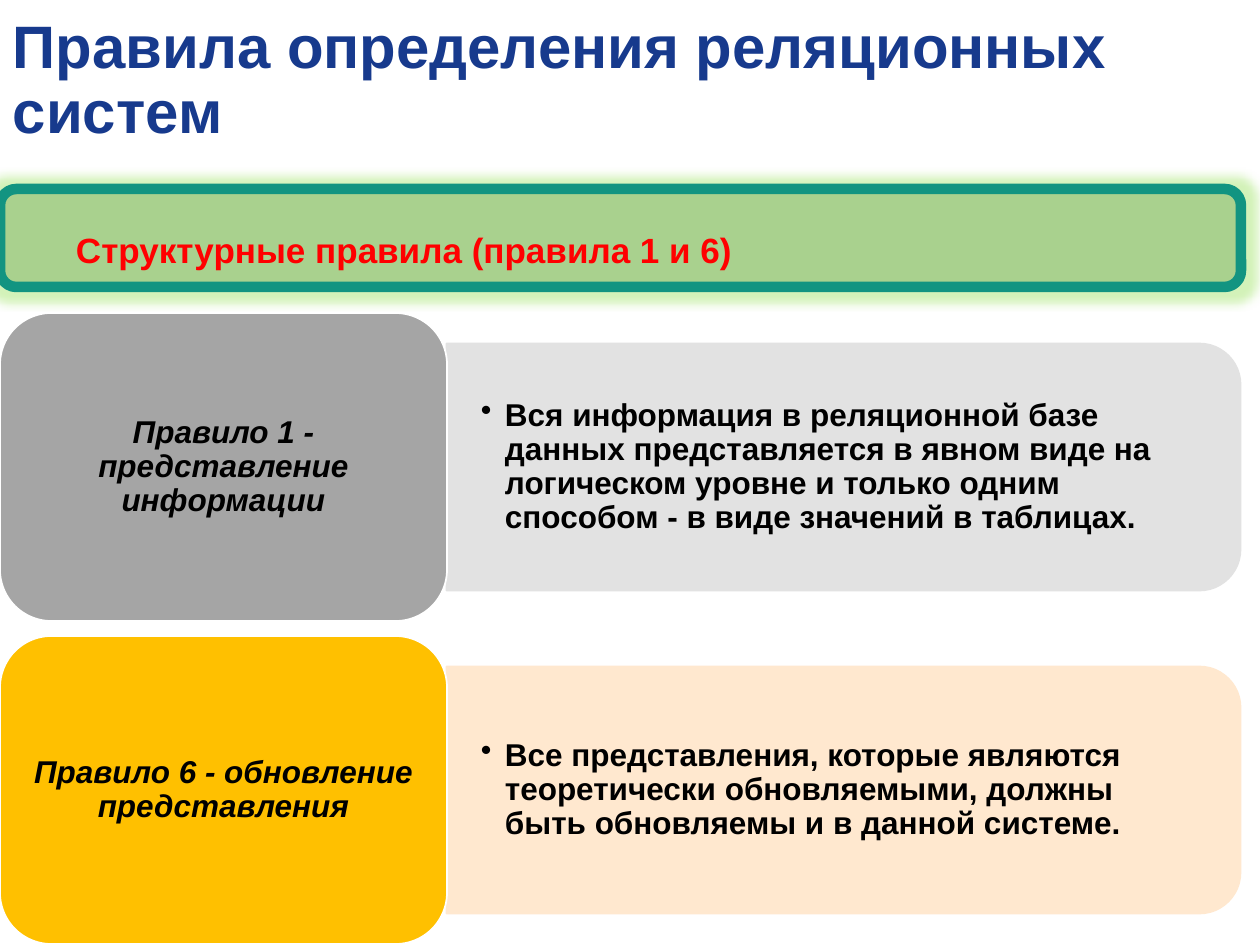
from lxml import etree
from pptx import Presentation
from pptx import util as u
from pptx.dml.color import RGBColor
from pptx.enum import shapes, text
from pptx.oxml.ns import qn

PX = 914400 / 126
NAVY = RGBColor(0x17, 0x3A, 0x8D)
RED = RGBColor(0xFF, 0, 0)
BLACK = RGBColor(0, 0, 0)
WHITE = RGBColor(0xFF, 0xFF, 0xFF)
GREEN = RGBColor(0xA9, 0xD1, 0x8E)
TEAL = RGBColor(0x12, 0x94, 0x81)
GRAY = RGBColor(0xA5, 0xA5, 0xA5)
PALE = RGBColor(0xE2, 0xE2, 0xE2)
GOLD = RGBColor(0xFF, 0xC0, 0)
CREAM = RGBColor(0xFF, 0xE8, 0xCF)
GLOW = RGBColor(0x92, 0xE0, 0x50)
MID = text.MSO_ANCHOR.MIDDLE
LEFT = text.PP_ALIGN.LEFT
ROUND = shapes.MSO_SHAPE.ROUNDED_RECTANGLE
TAB = shapes.MSO_SHAPE.ROUND_2_SAME_RECTANGLE


def emu(n):
    return u.Emu(round(n * PX))


def shape(slide, kind, box, fill, line, width=1):
    item = slide.shapes.add_shape(kind, *map(emu, box))
    item.shadow.inherit = False
    item.fill.solid()
    item.fill.fore_color.rgb = fill
    item.line.color.rgb = line
    item.line.width = u.Pt(width)
    return item


def write(item, words, size=18, color=BLACK, italic=False, align=LEFT,
          anchor=MID, inset=(13, 6), space=0.9, bullet=0):
    frame = item.text_frame
    frame.word_wrap = True
    frame.vertical_anchor = anchor
    frame.margin_left = frame.margin_right = emu(inset[0])
    frame.margin_top = frame.margin_bottom = emu(inset[1])
    para = frame.paragraphs[0]
    para.alignment = align
    para.line_spacing = space
    if bullet:
        props = para._p.get_or_add_pPr()
        props.set("marL", str(emu(bullet)))
        props.set("indent", str(-emu(bullet)))
        etree.SubElement(props, qn("a:buChar")).set("char", "•")
    run = para.add_run()
    run.text = words
    font = run.font
    font.name = "Arial"
    font.size = u.Pt(size)
    font.bold = True
    font.italic = italic
    font.color.rgb = color


def label(slide, box, words, **form):
    write(slide.shapes.add_textbox(*map(emu, box)), words, **form)


def glow(item, color, rad):
    effects = item._element.spPr.find(qn("a:effectLst"))
    node = etree.SubElement(effects, qn("a:glow"), rad=str(u.Pt(rad)))
    tint = etree.SubElement(node, qn("a:srgbClr"), val=str(color))
    etree.SubElement(tint, qn("a:alpha"), val="40000")


def head(slide, box):
    label(slide, box, "Правила определения реляционных систем",
          size=34.2, color=NAVY)


def band(slide, box):
    x, y, w, h = box
    glow(shape(slide, ROUND, box, GREEN, TEAL, 6), GLOW, 11)
    label(slide, (x + 63, y + 40, w - 63, 40),
          "Структурные правила (правила 1 и 6)", size=20, color=RED,
          anchor=text.MSO_ANCHOR.TOP, inset=(13, 0), space=1)


def rule(slide, box, name, note, dark, light):
    x, y, w, h = box
    side, deep = 447, 247
    long = w - side
    left = x + side + (long - deep) // 2
    top = y + (h - long) // 2
    panel = shape(slide, TAB, (left, top, deep, long), light, light)
    panel.rotation = 90
    label(slide, (x + side, y + 43, long - 12, h - 86), note,
          inset=(34, 17), bullet=24)
    card = shape(slide, ROUND, (x, y, side, h), dark, WHITE)
    write(card, name, italic=True, align=text.PP_ALIGN.CENTER, inset=(9, 5))


def main():
    deck = Presentation()
    deck.slide_width, deck.slide_height = emu(1260), emu(945)
    slide = deck.slides.add_slide(deck.slide_layouts[6])
    head(slide, (0, 14, 1260, 135))
    band(slide, (0, 189, 1241, 98))
    rules = [
        ("Правило 1 - представление информации",
         "Вся информация в реляционной базе данных представляется в явном "
         "виде на логическом уровне и только одним способом - в виде "
         "значений в таблицах.", GRAY, PALE),
        ("Правило 6 - обновление представления",
         "Все представления, которые являются теоретически обновляемыми, "
         "должны быть обновляемы и в данной системе.", GOLD, CREAM),
    ]
    for i, parts in enumerate(rules):
        rule(slide, (0, 313 + 323 * i, 1241, 308), *parts)
    deck.save("out.pptx")


if __name__ == "__main__":
    main()
